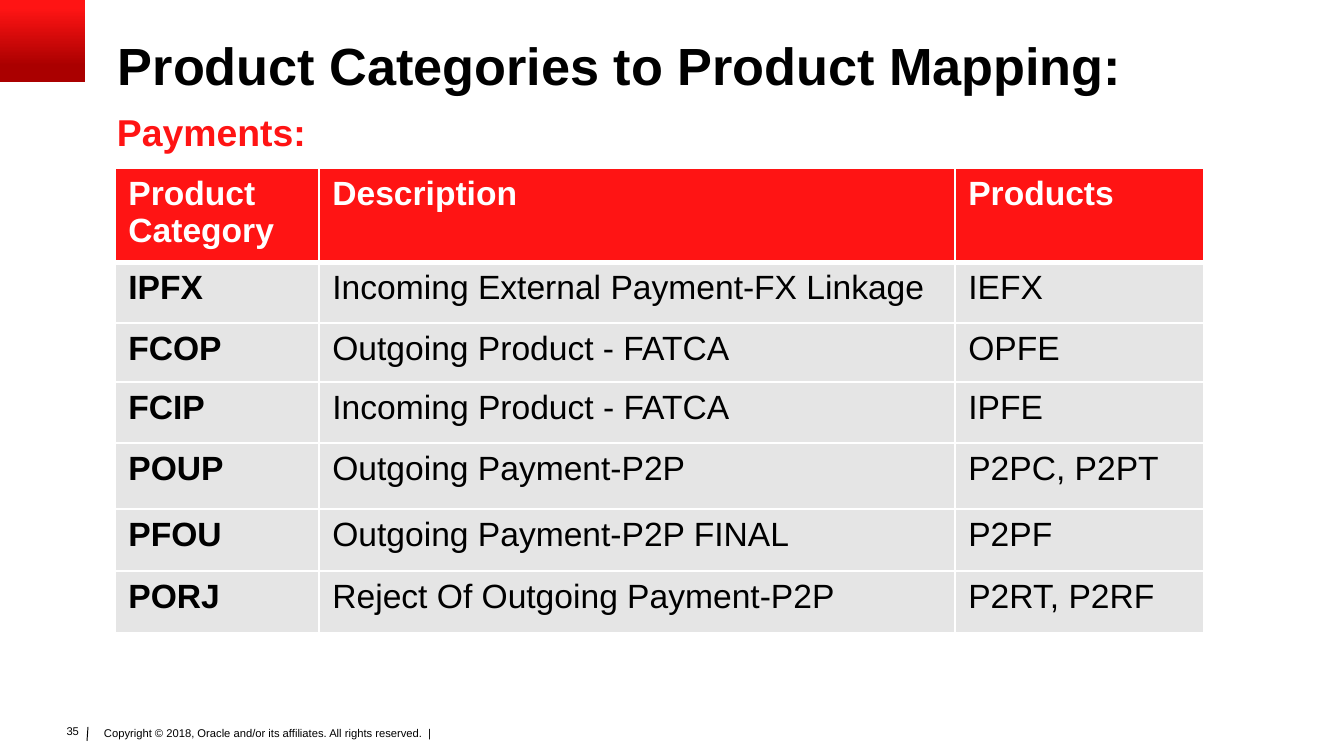
from lxml.etree import SubElement
from pptx import Presentation
from pptx.dml.color import RGBColor
from pptx.enum.shapes import MSO_CONNECTOR, MSO_SHAPE
from pptx.enum.text import MSO_ANCHOR, PP_ALIGN
from pptx.oxml import parse_xml
from pptx.oxml.ns import nsdecls, qn
from pptx.util import Pt

EMU_PER_PX = 914400 / 134.4
FONT = "Arial"
COLORS = {
    "black": "000000",
    "white": "FFFFFF",
    "red": "FF1414",
    "dark_red": "AA0000",
    "gray": "E5E5E5",
}
COLUMN_WIDTHS = [204, 636, 249]
ROW_HEIGHTS = [91, 61, 59, 61, 66, 62, 62]
ROWS = [
    ("Product Category", "Description", "Products"),
    ("IPFX", "Incoming External Payment-FX Linkage", "IEFX"),
    ("FCOP", "Outgoing Product - FATCA", "OPFE"),
    ("FCIP", "Incoming Product - FATCA", "IPFE"),
    ("POUP", "Outgoing Payment-P2P", "P2PC, P2PT"),
    ("PFOU", "Outgoing Payment-P2P FINAL", "P2PF"),
    ("PORJ", "Reject Of Outgoing Payment-P2P", "P2RT, P2RF"),
]


def px(*lengths):
    """Turn pixel lengths into a list of EMU values."""
    return [round(length * EMU_PER_PX) for length in lengths]


def rgb(name):
    """Look up a named colour."""
    return RGBColor.from_string(COLORS[name])


def add_run(paragraph, text, size, color, bold=False):
    """Add one formatted run to a paragraph."""
    run = paragraph.add_run()
    run.text = text
    run.font.name = FONT
    run.font.size = Pt(size)
    run.font.bold = bold
    run.font.color.rgb = rgb(color)


def add_text(slide, box, text, size, color="black", bold=False, margins=(0, 0),
             anchor=MSO_ANCHOR.TOP, align=PP_ALIGN.LEFT, spacing=None, wrap=True):
    """Add a text box with a single paragraph."""
    frame = slide.shapes.add_textbox(*px(*box)).text_frame
    frame.word_wrap = wrap
    frame.vertical_anchor = anchor
    horizontal, vertical = px(*margins)
    frame.margin_left = frame.margin_right = horizontal
    frame.margin_top = frame.margin_bottom = vertical
    paragraph = frame.paragraphs[0]
    paragraph.alignment = align
    paragraph.line_spacing = spacing
    add_run(paragraph, text, size, color, bold)


def add_corner(slide):
    """Add the red gradient block in the top left corner."""
    shape = slide.shapes.add_shape(MSO_SHAPE.RECTANGLE, *px(0, 0, 85, 82))
    shape.shadow.inherit = False
    shape.line.fill.background()
    shape.fill.gradient()
    shape.fill.gradient_angle = 90
    stops = [(0.2, "dark_red"), (0.9, "red")]
    for stop, (position, color) in zip(shape.fill.gradient_stops, stops):
        stop.position = position
        stop.color.rgb = rgb(color)


def add_divider(slide):
    """Add the thin line beside the slide number."""
    connector = slide.shapes.add_connector(MSO_CONNECTOR.STRAIGHT, *px(88, 727, 87, 741))
    connector.line.color.rgb = rgb("black")
    connector.line.width = Pt(0.5)
    SubElement(connector._element.spPr, qn("a:effectLst"))


def set_borders(cell, bottom_width):
    """Draw white borders around a cell."""
    widths = {"lnL": 1, "lnR": 1, "lnT": 1, "lnB": bottom_width}
    properties = cell._tc.get_or_add_tcPr()
    for index, (tag, width) in enumerate(widths.items()):
        properties.insert(index, parse_xml(
            f'<a:{tag} {nsdecls("a")} w="{Pt(width)}"><a:solidFill>'
            f'<a:srgbClr val="{COLORS["white"]}"/></a:solidFill></a:{tag}>'))


def add_mapping_table(slide):
    """Add the table that maps categories to products."""
    box = px(115, 168, sum(COLUMN_WIDTHS), sum(ROW_HEIGHTS))
    table = slide.shapes.add_table(len(ROWS), len(COLUMN_WIDTHS), *box).table
    table.horz_banding = False
    for column, width in zip(table.columns, px(*COLUMN_WIDTHS)):
        column.width = width
    for row, height in zip(table.rows, px(*ROW_HEIGHTS)):
        row.height = height
    for row_index, texts in enumerate(ROWS):
        header = row_index == 0
        for column_index, text in enumerate(texts):
            cell = table.cell(row_index, column_index)
            cell.fill.solid()
            cell.fill.fore_color.rgb = rgb("red" if header else "gray")
            set_borders(cell, 3 if row_index == 0 else 1)
            add_run(cell.text_frame.paragraphs[0], text, 18,
                    "white" if header else "black", header or column_index == 0)


def main():
    """Build and save the slide."""
    presentation = Presentation()
    presentation.slide_width, presentation.slide_height = px(1344, 756)
    slide = presentation.slides.add_slide(presentation.slide_layouts[6])
    add_text(slide, (99, 723, 878, 32),
             "Copyright © 2018, Oracle and/or its affiliates. All rights reserved.  |",
             6, margins=(5, 3))
    add_divider(slide)
    add_text(slide, (52, 718, 40, 27), "35", 6, margins=(13, 7),
             align=PP_ALIGN.RIGHT, wrap=False)
    add_corner(slide)
    add_text(slide, (118, 36, 1210, 65), "Product Categories to Product Mapping:",
             28, bold=True, anchor=MSO_ANCHOR.MIDDLE, spacing=0.9)
    add_mapping_table(slide)
    add_text(slide, (117, 109, 1210, 44), "Payments:", 20, "red", bold=True)
    presentation.save("out.pptx")


if __name__ == "__main__":
    main()
